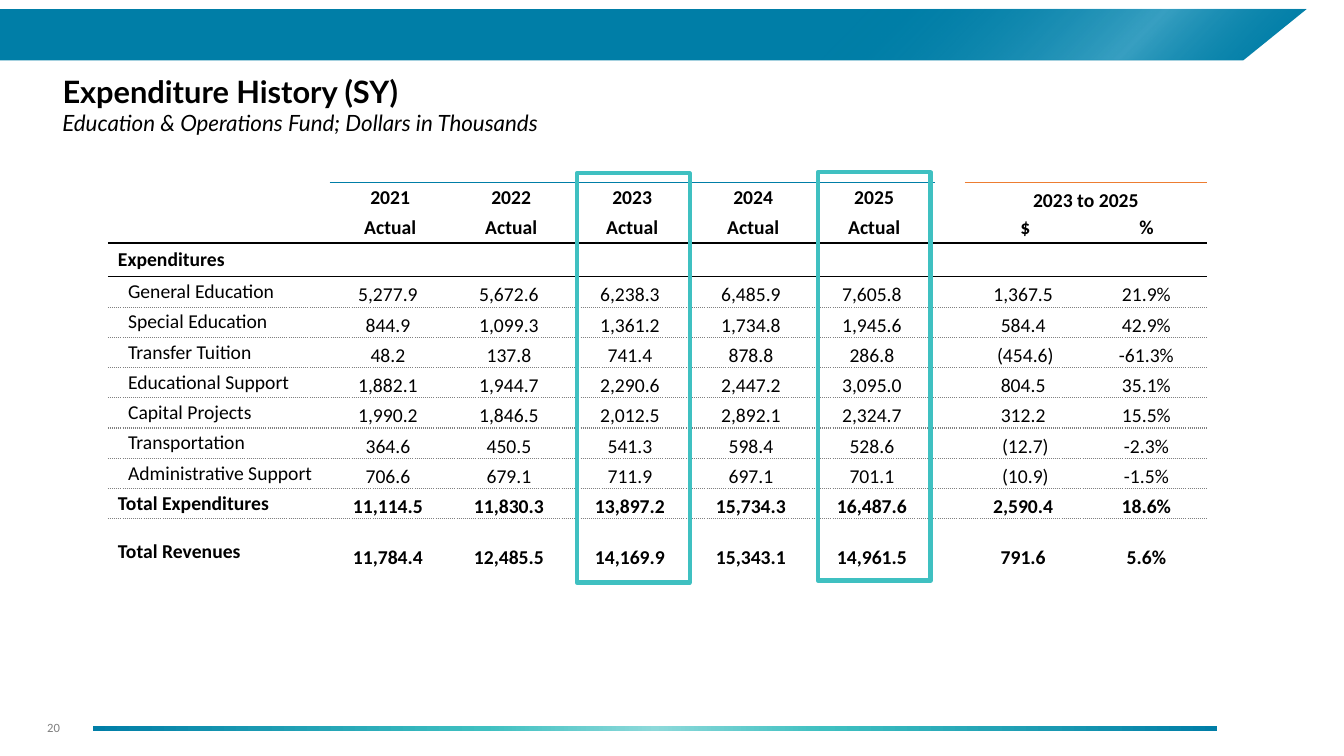
from lxml import etree
from pptx import Presentation
from pptx import util as u
from pptx.dml.color import RGBColor
from pptx.enum import shapes, text
from pptx.oxml import ns

PX = 9144
BLUE = RGBColor(0x00, 0x7E, 0xA7)
TEAL = RGBColor(0x3F, 0xC0, 0xC1)
PALE_TEAL = RGBColor(0x8C, 0xD9, 0xDA)
PALE_BLUE = RGBColor(0xBA, 0xEE, 0xFF)
ORANGE = RGBColor(0xED, 0x7D, 0x31)
GRAY = RGBColor(0x80, 0x80, 0x80)
BLACK = RGBColor(0, 0, 0)


def add_gradient(shape, stops, angle):
    shape.fill.gradient()
    shape.fill.gradient_angle = -angle % 360
    stop_list = shape._element.spPr.find(ns.qn("a:gradFill")).find(ns.qn("a:gsLst"))
    for old_stop in list(stop_list):
        stop_list.remove(old_stop)
    for position, color, opacity in stops:
        stop = etree.SubElement(stop_list, ns.qn("a:gs"), pos=str(position * 1000))
        tint = etree.SubElement(stop, ns.qn("a:srgbClr"), val=str(color))
        if opacity < 100:
            etree.SubElement(tint, ns.qn("a:alpha"), val=str(opacity * 1000))


def add_span(para, wording, font, size, color, bold=False, italic=False):
    span = para.add_run()
    span.text = wording
    span.font.name = font
    span.font.size = u.Pt(size)
    span.font.color.rgb = color
    span.font.bold = bold
    span.font.italic = italic


deck = Presentation()
deck.slide_width, deck.slide_height = 1333 * PX, 750 * PX
page = deck.slides.add_slide(deck.slide_layouts[5])

bands = []
for bottom in (60, 59):
    outline = page.shapes.build_freeform(0, 9, scale=PX)
    outline.add_line_segments([(1296, 9), (1233, bottom), (0, bottom)], close=True)
    band = outline.convert_to_shape()
    band.shadow.inherit = False
    band.line.fill.background()
    bands.append(band)
bands[0].fill.solid()
bands[0].fill.fore_color.rgb = BLUE
add_gradient(bands[1], [(64, BLUE, 0), (86, PALE_BLUE, 30), (100, BLUE, 0)], 45)

footer_bar = page.shapes.add_shape(
    shapes.MSO_SHAPE.RECTANGLE, 92 * PX, 720 * PX, 1115 * PX, 5 * PX)
footer_bar.shadow.inherit = False
footer_bar.line.fill.background()
add_gradient(footer_bar, [(0, BLUE, 100), (35, TEAL, 100), (50, PALE_TEAL, 100),
                          (65, TEAL, 100), (100, BLUE, 100)], 0)

title = page.shapes.title
title.left, title.top, title.width, title.height = 52 * PX, 71 * PX, 1225 * PX, 50 * PX
subtitle = page.shapes.add_textbox(52 * PX, 106 * PX, 1225 * PX, 40 * PX)
for box, wording, size, bold in (
    (title, "Expenditure History (SY)", 22, True),
    (subtitle, "Education & Operations Fund; Dollars in Thousands", 16, False),
):
    frame = box.text_frame
    frame.word_wrap = True
    frame.auto_size = text.MSO_AUTO_SIZE.NONE
    frame.vertical_anchor = text.MSO_ANCHOR.TOP
    para = frame.paragraphs[0]
    para.alignment = text.PP_ALIGN.LEFT
    para.line_spacing = 0.9
    add_span(para, wording, "Lato", size, BLACK, bold=bold, italic=not bold)

rows = [
    ["", "2021", "2022", "2023", "2024", "2025", "", "2023 to 2025", ""],
    ["", "Actual", "Actual", "Actual", "Actual", "Actual", "", "$", "%"],
    ["Expenditures", "", "", "", "", "", "", "", ""],
    ["General Education", "5,277.9", "5,672.6", "6,238.3", "6,485.9", "7,605.8", "", "1,367.5", "21.9%"],
    ["Special Education", "844.9", "1,099.3", "1,361.2", "1,734.8", "1,945.6", "", "584.4", "42.9%"],
    ["Transfer Tuition", "48.2", "137.8", "741.4", "878.8", "286.8", "", "(454.6)", "-61.3%"],
    ["Educational Support", "1,882.1", "1,944.7", "2,290.6", "2,447.2", "3,095.0", "", "804.5", "35.1%"],
    ["Capital Projects", "1,990.2", "1,846.5", "2,012.5", "2,892.1", "2,324.7", "", "312.2", "15.5%"],
    ["Transportation", "364.6", "450.5", "541.3", "598.4", "528.6", "", "(12.7)", "-2.3%"],
    ["Administrative Support", "706.6", "679.1", "711.9", "697.1", "701.1", "", "(10.9)", "-1.5%"],
    ["Total Expenditures", "11,114.5", "11,830.3", "13,897.2", "15,734.3", "16,487.6", "", "2,590.4", "18.6%"],
    ["Total Revenues", "11,784.4", "12,485.5", "14,169.9", "15,343.1", "14,961.5", "", "791.6", "5.6%"],
]
rules_below = {1: (BLACK, 1, "solid")}
rules_below.update({row: (GRAY, 1, "sysDot") for row in range(3, 10)})
top_rules = {column: (BLUE, 1.5, "solid") for column in range(1, 6)}
top_rules.update({column: (ORANGE, 1.5, "solid") for column in (7, 8)})

table = page.shapes.add_table(12, 9, 107 * PX, 181 * PX, 1090 * PX, 383 * PX).table
table.first_row = False
table.horz_banding = False
table._tbl.tblPr.find(ns.qn("a:tableStyleId")).text = "{2D5ABB26-0587-4C30-8999-92F81FD0307C}"
for column, width in zip(table.columns, [220] + [120] * 5 + [30] + [120] * 2):
    column.width = width * PX
for line, height in zip(table.rows, [30] * 11 + [50]):
    line.height = height * PX
table.cell(0, 7).merge(table.cell(0, 8))

for row, values in enumerate(rows):
    for column, value in enumerate(values):
        cell = table.cell(row, column)
        cell.fill.background()
        is_label = column == 0
        is_item = 3 <= row <= 9
        padded = is_label and row in (2, 11)
        cell.margin_top = cell.margin_bottom = (5 if padded else 0) * PX
        cell.margin_right = (10 if is_label or row < 2 else 0) * PX
        cell.margin_left = (20 if is_label and is_item else 10 if is_label or row < 2 else 0) * PX
        centered = (row < 2 and column < 7) or row == 1 or (is_label and row < 11)
        cell.vertical_anchor = text.MSO_ANCHOR.MIDDLE if centered else text.MSO_ANCHOR.BOTTOM
        para = cell.text_frame.paragraphs[0]
        para.alignment = text.PP_ALIGN.LEFT if is_label else text.PP_ALIGN.CENTER
        if value:
            is_amount = row > 2 and not is_label and value[-1].isdigit()
            add_span(para, value + " " * is_amount, "Calibri", 14, BLACK, bold=not is_item)
        else:
            para._p.get_or_add_endParaRPr().set("sz", "1400")
        above = rules_below.get(row - 1) if row else top_rules.get(column)
        for side, rule in (("a:lnB", rules_below.get(row)), ("a:lnT", above)):
            if rule:
                color, weight, dash = rule
                edge = etree.Element(ns.qn(side), w=str(int(u.Pt(weight))))
                paint = etree.SubElement(edge, ns.qn("a:solidFill"))
                etree.SubElement(paint, ns.qn("a:srgbClr"), val=str(color))
                etree.SubElement(edge, ns.qn("a:prstDash"), val=dash)
                cell._tc.get_or_add_tcPr().insert(0, edge)

page_number = page.shapes.add_textbox(37 * PX, 702 * PX, 225 * PX, 40 * PX)
page_number.text_frame.word_wrap = True
page_number.text_frame.vertical_anchor = text.MSO_ANCHOR.MIDDLE
add_span(page_number.text_frame.paragraphs[0], "20", "Calibri", 9, GRAY)

for left, top, height in ((572, 172, 406), (811, 171, 405)):
    highlight = page.shapes.add_shape(
        shapes.MSO_SHAPE.RECTANGLE, left * PX, top * PX, 112 * PX, height * PX)
    highlight.shadow.inherit = False
    highlight.fill.background()
    highlight.line.color.rgb = TEAL
    highlight.line.width = u.Pt(3)

deck.save("out.pptx")
